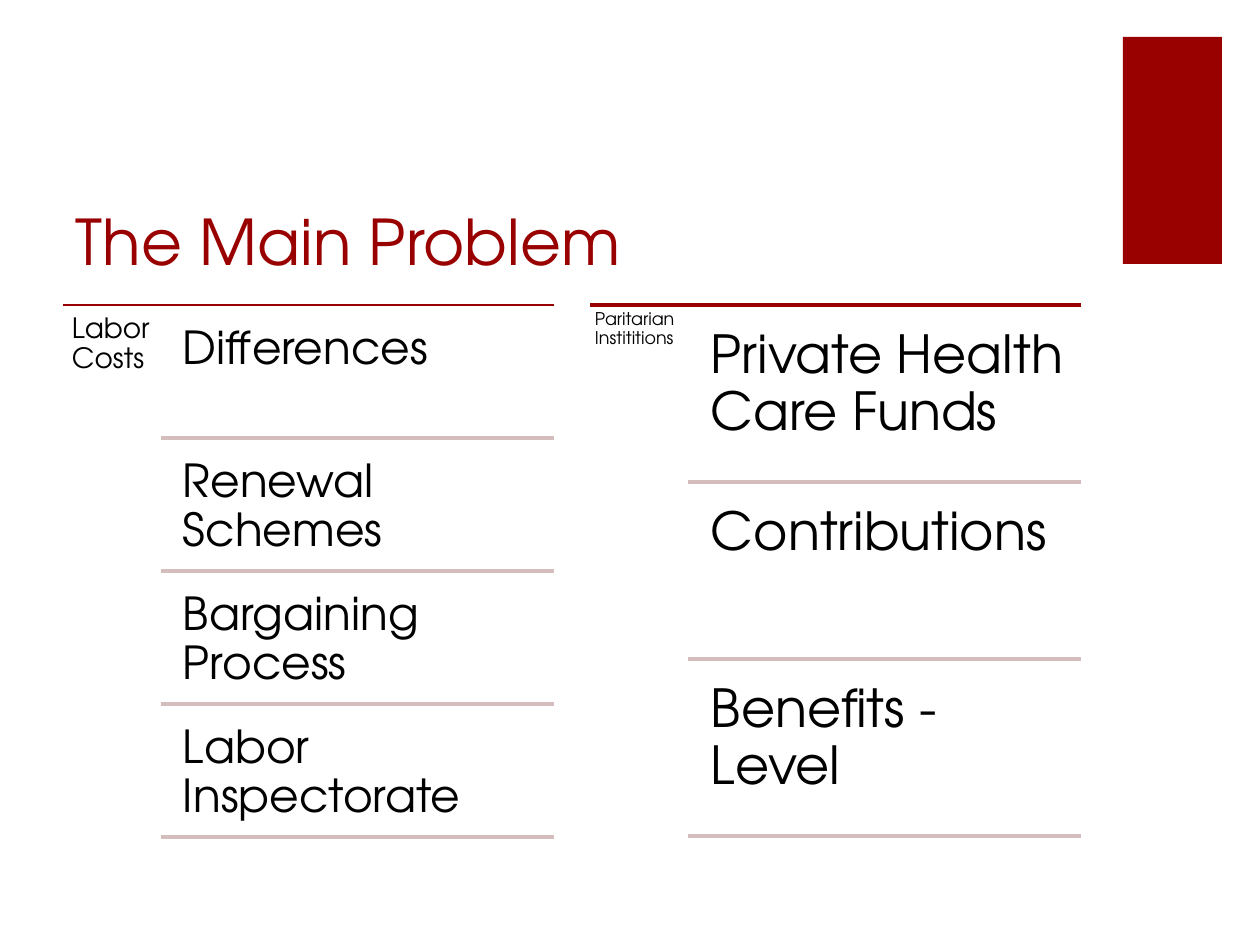
from pptx import Presentation
from pptx.dml.color import RGBColor
from pptx.enum.shapes import MSO_CONNECTOR as CONN, MSO_SHAPE as SHAPE
from pptx.enum.text import MSO_ANCHOR as ANCHOR
from pptx.oxml.ns import qn
from pptx.util import Pt
from lxml.etree import SubElement

FONT = "TeX Gyre Adventor"
RED, ROSE, BLACK = "990000", "D4BDBD", "000000"
TITLE = "The Main Problem"
COLUMNS = [
    dict(heading="Labor Costs", left=63, rule=1, head_size=16, head_inset=9,
         size=26, inset=14, gap=6, row=127,
         items=["Differences", "Renewal Schemes", "Bargaining Process",
                "Labor Inspectorate"]),
    dict(heading="Paritarian Instititions", left=590, rule=2, head_size=10,
         head_inset=5, size=30, inset=15, gap=8, row=169,
         items=["Private Health Care Funds", "Contributions",
                "Benefits - Level"]),
]
TOP, WIDTH, HEIGHT = 305, 491, 539
HEAD_W, INDENT = 98, 106


def px(n):
    return round(n * 914400 / 126)


def rgb(color):
    return RGBColor.from_string(color)


def add_text(s, text, x, y, w, h, size=26, color=BLACK, inset=(13, 6),
             spacing=0.9, anchor=ANCHOR.TOP):
    tf = s.shapes.add_textbox(px(x), px(y), px(w), px(h)).text_frame
    tf.word_wrap = True
    tf.vertical_anchor = anchor
    tf.margin_left = tf.margin_right = px(inset[0])
    tf.margin_top = tf.margin_bottom = px(inset[1])
    p = tf.paragraphs[0]
    p.line_spacing = spacing
    r = p.add_run()
    r.text = text
    r.font.name, r.font.size = FONT, Pt(size)
    r.font.color.rgb = rgb(color)


def add_rule(s, x1, x2, y, color, width):
    c = s.shapes.add_connector(CONN.STRAIGHT, px(x1), px(y), px(x2), px(y))
    c.line.color.rgb = rgb(color)
    c.line.width = Pt(width)
    SubElement(c._element.spPr, qn("a:effectLst"))


def add_column(s, col):
    left, right = col["left"], col["left"] + WIDTH
    add_rule(s, left, right, TOP, RED, col["rule"])
    add_text(s, col["heading"], left, TOP, HEAD_W, HEIGHT,
             size=col["head_size"], inset=(col["head_inset"],) * 2)
    for i, item in enumerate(col["items"]):
        y = TOP + col["gap"] + i * (col["row"] + col["gap"])
        add_text(s, item, left + INDENT, y, WIDTH - INDENT, col["row"],
                 size=col["size"], inset=(col["inset"],) * 2)
        add_rule(s, left + HEAD_W, right, y + col["row"], ROSE, 2)


def main():
    prs = Presentation()
    prs.slide_width, prs.slide_height = px(1260), px(945)
    s = prs.slides.add_slide(prs.slide_layouts[6])
    sp = s.shapes.add_shape(SHAPE.RECTANGLE, px(1123), px(37), px(99), px(227))
    sp.shadow.inherit = False
    sp.fill.solid()
    sp.fill.fore_color.rgb = rgb(RED)
    sp.line.fill.background()
    add_text(s, TITLE, 63, 126, 1018, 158, size=36, color=RED, spacing=1.0,
             anchor=ANCHOR.BOTTOM)
    for col in COLUMNS:
        add_column(s, col)
    prs.save("out.pptx")


if __name__ == "__main__":
    main()
